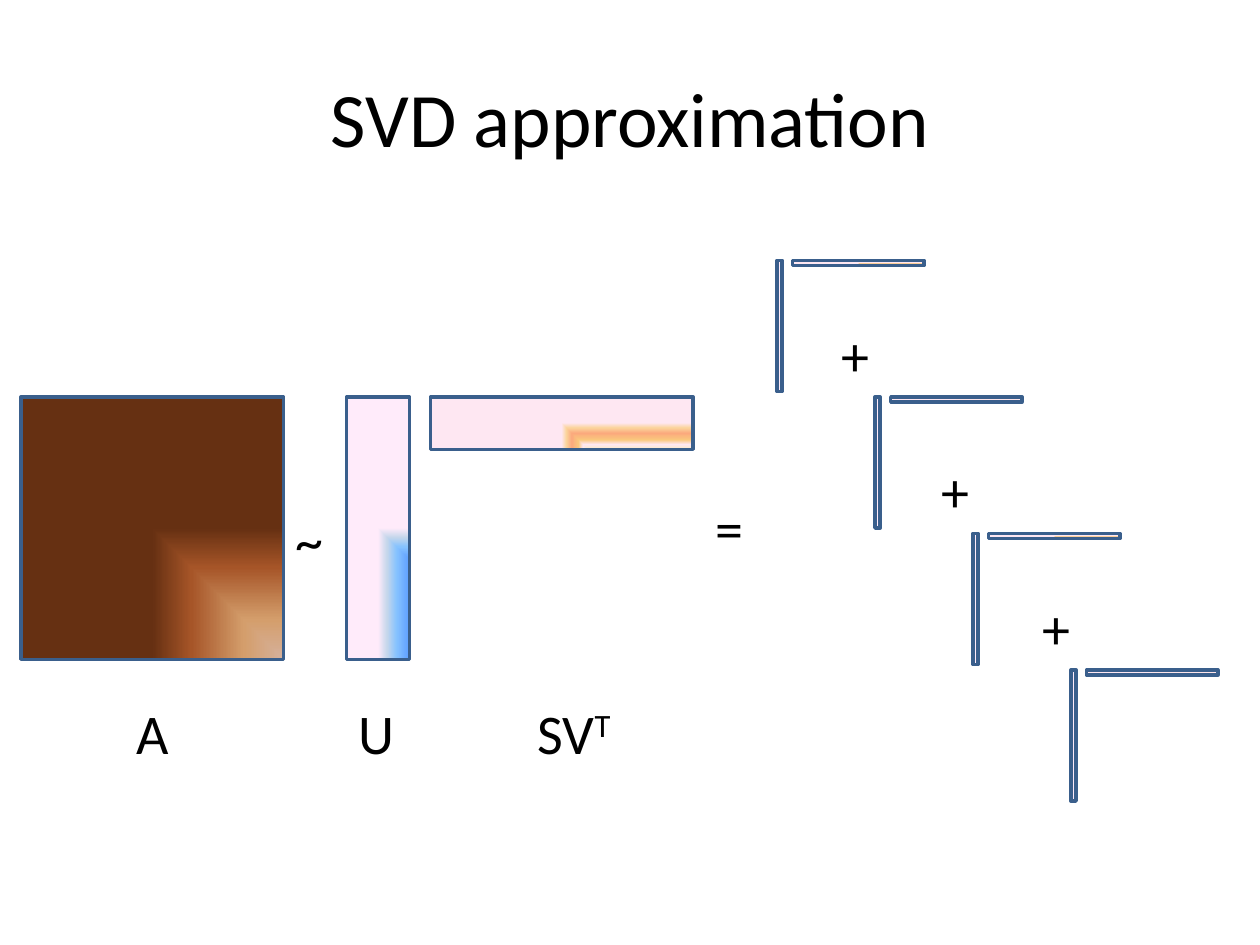
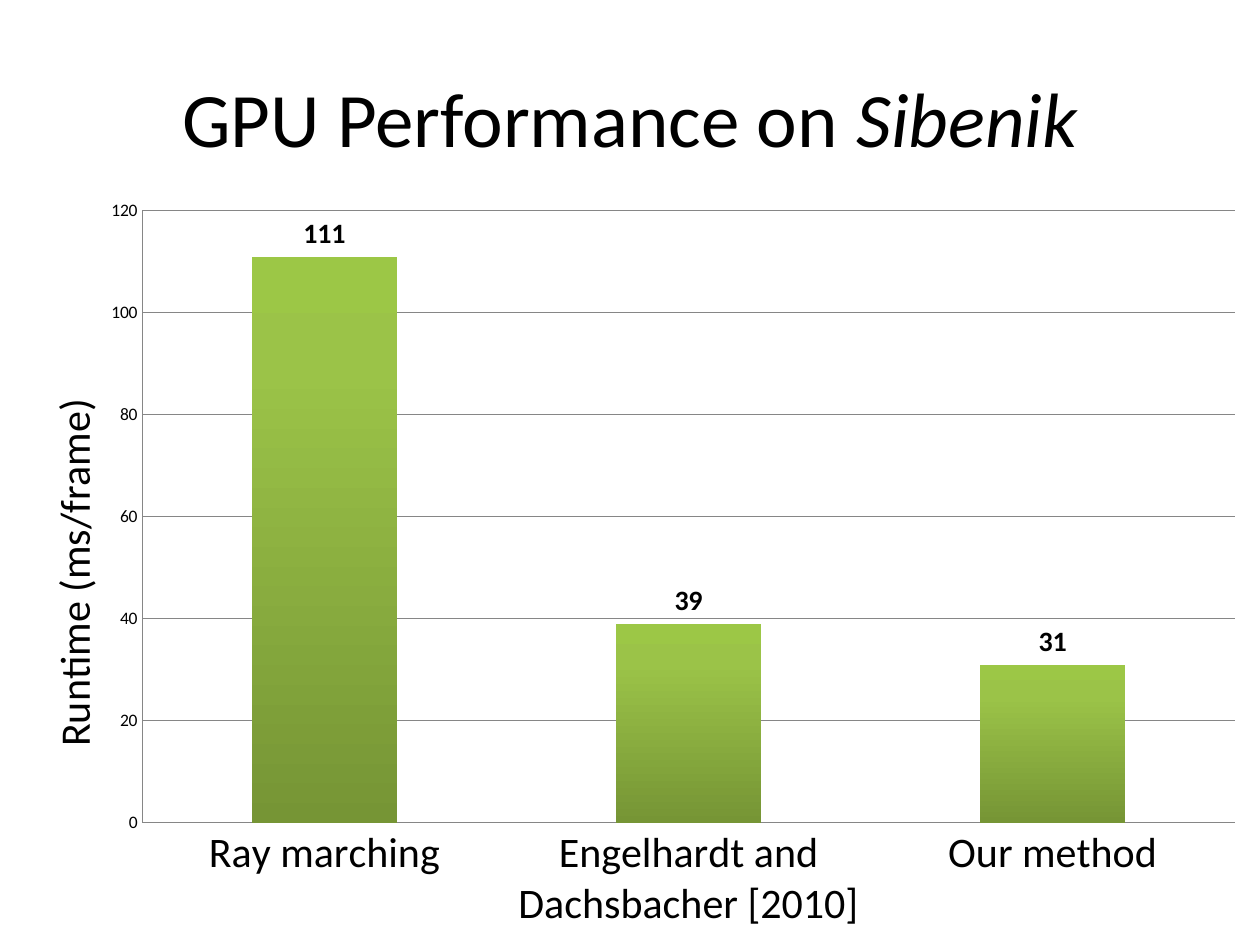
from lxml import etree
from pptx import Presentation
from pptx.chart.data import CategoryChartData
from pptx.dml.color import RGBColor
from pptx.enum.chart import XL_CHART_TYPE, XL_LABEL_POSITION, XL_TICK_MARK
from pptx.enum.shapes import MSO_SHAPE
from pptx.enum.text import MSO_ANCHOR, MSO_AUTO_SIZE, PP_ALIGN
from pptx.oxml.ns import qn
from pptx.util import Inches, Pt

COLUMN_CHART = XL_CHART_TYPE.COLUMN_CLUSTERED
OUTSIDE_END = XL_LABEL_POSITION.OUTSIDE_END
NO_TICK = XL_TICK_MARK.NONE
RECTANGLE = MSO_SHAPE.RECTANGLE
MIDDLE = MSO_ANCHOR.MIDDLE
GROW = MSO_AUTO_SIZE.SHAPE_TO_FIT_TEXT
CENTER = PP_ALIGN.CENTER

FONT = "Calibri"
BLACK = "000000"
OUTLINE = "3A5F8C"
GRID_GRAY = "868686"
BROWN = [(0, "D6B19C"), (30, "D49E6C"), (70, "A65528"), (100, "663012")]
BLUE = [(0, "5E9EFF"), (40, "85C2FF"), (70, "C4D6EB"), (100, "FFEBFA")]
PEACH = [(0, "FBEAC7"), (18, "FEE7F2"), (36, "FAC77D"),
         (61, "FBA97D"), (82, "FBD49C"), (100, "FEE7F2")]
GREEN = [(0, "769535"), (80, "9BC348"), (100, "9CC746")]

COLUMNS, ROWS = 120, 90
SLIDE_WIDTH, SLIDE_HEIGHT = Inches(10), Inches(7.5)
MATRIX_SIZE = 25
MATRIX_ROW = 37.8
LABEL_ROW = 65.9
TERM_SIZE = 12.5
TERM_COUNT = 4
TERM_ROW_STEP = 13


def color(value):
    """Return the colour for a hex string."""
    return RGBColor.from_string(value)


def cells(column, row, width, height):
    """Return slide lengths for an area given in grid cells."""
    unit_x, unit_y = SLIDE_WIDTH / COLUMNS, SLIDE_HEIGHT / ROWS
    return [round(length) for length in
            (column * unit_x, row * unit_y, width * unit_x, height * unit_y)]


def style_font(font, size, bold=None, italic=None):
    """Apply the shared typeface and colour at a given size."""
    font.name = FONT
    font.size = Pt(size)
    font.bold = bold
    font.italic = italic
    font.color.rgb = color(BLACK)


def add_text(para, text, size=32, italic=None, raised=False):
    """Append a formatted run to a paragraph."""
    span = para.add_run()
    span.text = text
    style_font(span.font, size, italic=italic)
    if raised:
        span.font._element.set("baseline", "30000")


def add_page(deck, title, italic_part=""):
    """Add a title-only slide with the shared title style."""
    page = deck.slides.add_slide(deck.slide_layouts[5])
    heading = page.shapes.title
    heading.left, heading.top, heading.width, heading.height = cells(6, 3.6, 108, 15)
    heading.text_frame.vertical_anchor = MIDDLE
    para = heading.text_frame.paragraphs[0]
    para.alignment = CENTER
    add_text(para, title, size=44)
    if italic_part:
        add_text(para, italic_part, size=44, italic=True)
    return page


def add_label(page, text, column, row, width=5.2, superscript=""):
    """Add a large one-line symbol or matrix name."""
    box = page.shapes.add_textbox(*cells(column, row, width, 7.7))
    box.text_frame.word_wrap = False
    box.text_frame.auto_size = GROW
    para = box.text_frame.paragraphs[0]
    add_text(para, text)
    if superscript:
        add_text(para, superscript, raised=True)


def set_gradient(fill, element, stops, from_corner=False):
    """Fill an element with gradient stops, upward or from its lower right corner."""
    fill.gradient()
    gradient = element.find(".//" + qn("a:gradFill"))
    for child in list(gradient):
        gradient.remove(child)
    stop_list = etree.SubElement(gradient, qn("a:gsLst"))
    for percent, value in stops:
        stop = etree.SubElement(stop_list, qn("a:gs"), pos=str(percent * 1000))
        etree.SubElement(stop, qn("a:srgbClr"), val=value)
    if from_corner:
        shade = etree.SubElement(gradient, qn("a:path"), path="rect")
        etree.SubElement(shade, qn("a:fillToRect"), l="100000", t="100000")
        etree.SubElement(gradient, qn("a:tileRect"), r="-100000", b="-100000")
    else:
        etree.SubElement(gradient, qn("a:lin"), ang="16200000", scaled="0")


def add_matrix(shapes, stops, column, row, width, height):
    """Add an outlined matrix block shaded from its corner."""
    block = shapes.add_shape(RECTANGLE, *cells(column, row, width, height))
    block.shadow.inherit = False
    set_gradient(block.fill, block.element, stops, from_corner=True)
    block.line.color.rgb = color(OUTLINE)
    block.line.width = Pt(2)


def add_term(page, column, row):
    """Add one column vector and row vector as a group."""
    shapes = page.shapes.add_group_shape().shapes
    add_matrix(shapes, BLUE, column, row, 0.5, TERM_SIZE)
    add_matrix(shapes, PEACH, column + 1.5, row, TERM_SIZE, 0.5)


def set_layout(parent, index, **shares):
    """Place a chart part by shares of the chart's size."""
    for existing in parent.findall(qn("c:layout")):
        parent.remove(existing)
    layout = etree.Element(qn("c:layout"))
    manual = etree.SubElement(layout, qn("c:manualLayout"))
    if "w" in shares:
        etree.SubElement(manual, qn("c:layoutTarget"), val="inner")
    settings = {"xMode": "edge", "yMode": "edge", **shares}
    for name, value in settings.items():
        etree.SubElement(manual, qn("c:" + name), val=str(value))
    parent.insert(index, layout)


def style_axis(axis, size):
    """Format an axis with plain grey lines and no ticks."""
    axis.major_tick_mark = NO_TICK
    axis.minor_tick_mark = NO_TICK
    axis.format.line.color.rgb = color(GRID_GRAY)
    axis.format.line.width = Pt(0.75)
    style_font(axis.tick_labels.font, size)


def add_runtime_chart(page, runtimes):
    """Add the labelled column chart of runtimes by method."""
    data = CategoryChartData()
    data.categories = list(runtimes)
    data.add_series("Series 1", list(runtimes.values()))
    area = cells(0, 17.76, COLUMNS, ROWS - 17.76)
    chart = page.shapes.add_chart(COLUMN_CHART, *area, data).chart
    chart.has_legend = False
    chart.has_title = False
    style_font(chart.font, 10)

    plot = chart.plots[0]
    plot.gap_width = 150
    plot.vary_by_categories = False
    series = plot.series[0]
    set_gradient(series.format.fill, chart.element, GREEN)
    labels = series.data_labels
    labels.show_value = True
    labels.position = OUTSIDE_END
    style_font(labels.font, 16, bold=True)

    style_axis(chart.category_axis, 24)
    value_axis = chart.value_axis
    style_axis(value_axis, 10)
    value_axis.minimum_scale, value_axis.maximum_scale = 0, 120
    value_axis.major_unit = 20
    value_axis.has_major_gridlines = True
    value_axis.major_gridlines.format.line.color.rgb = color(GRID_GRAY)
    value_axis.major_gridlines.format.line.width = Pt(0.75)
    title_para = value_axis.axis_title.text_frame.paragraphs[0]
    add_text(title_para, "Runtime (ms/frame)", size=24)
    title_para.runs[0].font.bold = False

    set_layout(chart.element.find(".//" + qn("c:plotArea")), 0,
               x=0.113, y=0.032, w=0.867, h=0.807)
    set_layout(chart.element.find(".//" + qn("c:valAx") + "/" + qn("c:title")), 1,
               x=0.03, y=0.27)


def build_approximation(deck):
    """Build the matrix factorisation and its sum of rank-one terms."""
    page = add_page(deck, "SVD approximation")
    add_matrix(page.shapes, BROWN, 2, MATRIX_ROW, MATRIX_SIZE, MATRIX_SIZE)
    add_matrix(page.shapes, BLUE, 33, MATRIX_ROW, 6, MATRIX_SIZE)
    add_matrix(page.shapes, PEACH, 41, MATRIX_ROW, MATRIX_SIZE, 5)
    add_label(page, "~", 27, 47.6)
    add_label(page, "=", 67, 46.4)
    add_label(page, "A", 11.8, LABEL_ROW, 5.5)
    add_label(page, "U", 33, LABEL_ROW, 5.9)
    add_label(page, "SV", 50, LABEL_ROW, 9.7, superscript="T")
    for index in range(TERM_COUNT):
        drop = index * TERM_ROW_STEP
        add_term(page, 74 + index * 9.33, 24.8 + drop)
        if index < TERM_COUNT - 1:
            add_label(page, "+", 79 + index * 9.53, 29.9 + drop)


def build_performance(deck):
    """Build the runtime comparison slide."""
    page = add_page(deck, "GPU Performance on ", "Sibenik")
    add_runtime_chart(page, {
        "Ray marching": 111,
        "Engelhardt and Dachsbacher [2010]": 39,
        "Our method": 31,
    })


def main():
    """Build and save the deck."""
    deck = Presentation()
    deck.slide_width, deck.slide_height = SLIDE_WIDTH, SLIDE_HEIGHT
    build_approximation(deck)
    build_performance(deck)
    deck.save("out.pptx")


if __name__ == "__main__":
    main()
